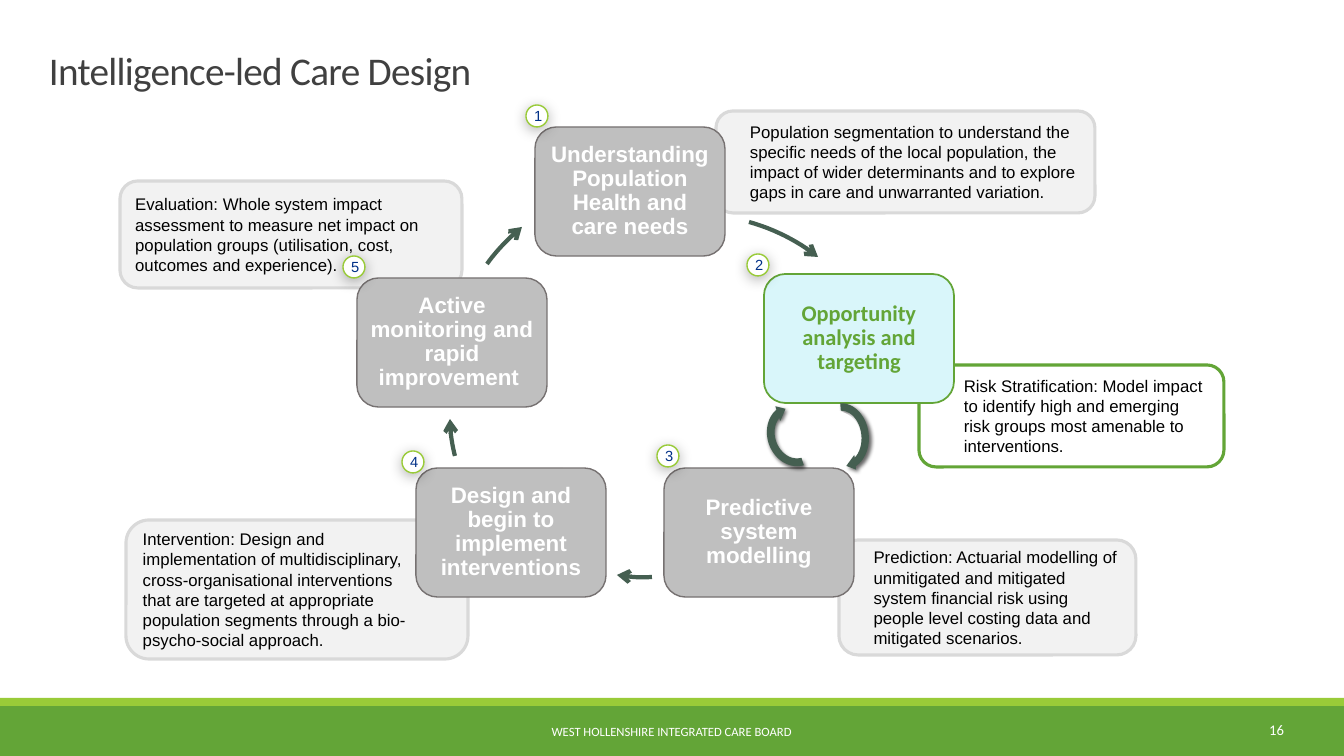
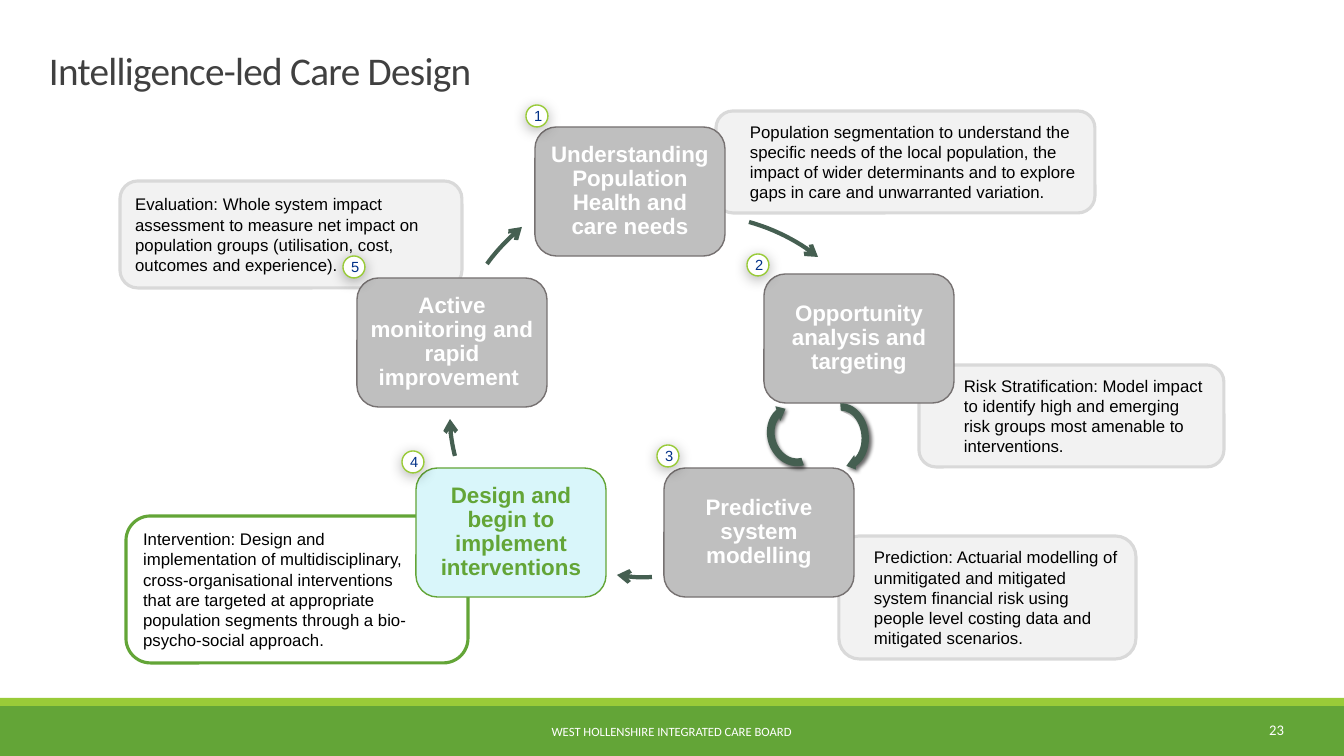
from lxml.etree import SubElement
from pptx import Presentation
from pptx.dml.color import RGBColor as Rgb
from pptx.enum.shapes import MSO_SHAPE as Kind
from pptx.enum.text import MSO_ANCHOR as Anchor, PP_ALIGN as Align
from pptx.oxml.ns import qn
from pptx.util import Pt

PX = 914400 / 100.8  # EMU in one px
COL = {
    "white": "FFFFFF", "black": "000000", "title": "404040", "green": "63A537",
    "lime": "99CB38", "pale": "F2F2F2", "rim": "D9D9D9", "grey": "BFBFBF",
    "edge": "767171", "aqua": "D9F6FA", "dark": "455F51", "navy": "003087",
}

# Step: left, top, text, badge left, badge top
STEPS = [
    (535, 127, "Understanding Population Health and care needs", 526, 105),
    (764, 274, "Opportunity analysis and targeting", 747, 254),
    (664, 468, "Predictive system modelling", 657, 445),
    (416, 468, "Design and begin to implement interventions", 402, 451),
    (357, 278, "Active monitoring and rapid improvement ", 343, 256),
]
# Note: step, box, left and right inset, whether its height varies, text
NOTES = [
    (3, (839, 540, 297, 115), 29, 10, True,
     "Prediction: Actuarial modelling of unmitigated and mitigated system "
     "financial risk using people level costing data and mitigated scenarios."),
    (1, (716, 111, 379, 102), 29, 10, False,
     "Population segmentation to understand the specific needs of the local "
     "population, the impact of wider determinants and to explore gaps in care "
     "and unwarranted variation."),
    (2, (919, 365, 305, 102), 40, 10, False,
     "Risk Stratification: Model impact to identify high and emerging risk "
     "groups most amenable to interventions."),
    (4, (126, 520, 342, 139), 10, 39, True,
     "Intervention: Design and implementation of multidisciplinary, "
     "cross-organisational interventions that are targeted at appropriate "
     "population segments through a bio-psycho-social approach."),
    (5, (120, 181, 342, 107), 10, 8, False,
     "Evaluation: Whole system impact assessment to measure net impact on "
     "population groups (utilisation, cost, outcomes and experience)."),
]
# Arrow: four Bezier points
ARROWS = [
    [(749, 222), (774, 229), (798, 241), (818, 257)],
    [(652, 577), (640, 578), (629, 577), (617, 575)],
    [(455, 456), (452, 444), (450, 431), (450, 419)],
    [(487, 264), (497, 250), (509, 238), (522, 227)],
]
LOOPS = [((806, 407, 74, 59), 83.6), ((759, 404, 71, 62), 251.2)]
# Page: number, active step, its font and line width, extra note height per side
PAGES = [("16", 2, "Calibri", 1.25, 0), ("23", 4, "Arial", 1, 4)]


def draw(kind, box, fill=None, line=None, width=1, shade=None):
    """Add a preset shape; shade is blur, distance, angle, opacity."""
    form = slide.shapes.add_shape(kind, *[round(v * PX) for v in box])
    form.shadow.inherit = False
    if fill:
        form.fill.solid()
        form.fill.fore_color.rgb = Rgb.from_string(COL[fill])
    else:
        form.fill.background()
    if line:
        form.line.color.rgb = Rgb.from_string(COL[line])
        form.line.width = Pt(width)
    else:
        form.line.fill.background()
    if shade:
        blur, dist, angle, alpha = shade
        glow = SubElement(form._element.spPr.find(qn("a:effectLst")), qn("a:outerShdw"),
                          blurRad=str(round(blur * PX)), dist=str(round(dist * PX)),
                          dir=str(angle * 60000), algn="ctr", rotWithShape="0")
        tone = SubElement(glow, qn("a:srgbClr"), val=COL["black"])
        SubElement(tone, qn("a:alpha"), val=str(alpha * 1000))
    return form


def write(form, text, size, col, font="Arial", align=Align.LEFT, pad=(10, 5, 10, 5)):
    """Set the text; pad is left, top, right, bottom."""
    frame = form.text_frame
    frame.word_wrap = True
    frame.vertical_anchor = Anchor.MIDDLE
    (frame.margin_left, frame.margin_top,
     frame.margin_right, frame.margin_bottom) = [round(v * PX) for v in pad]
    para = frame.paragraphs[0]
    para.text = text
    para.alignment = align
    para.font.size = Pt(size)
    para.font.name = font
    para.font.color.rgb = Rgb.from_string(COL[col])
    return para


deck = Presentation()
deck.slide_width = round(1344 * PX)
deck.slide_height = round(756 * PX)

for page, active, face, rule, grow in PAGES:
    slide = deck.slides.add_slide(deck.slide_layouts[6])

    # Bands, title and footer
    draw(Kind.RECTANGLE, (0, 706, 1344, 50), "green")
    draw(Kind.RECTANGLE, (0, 698, 1344, 8), "lime")
    for box, text, size, col, align, pad in [
        ((49, 0, 1245, 146), "Intelligence-led Care Design", 28, "title",
         Align.LEFT, (0, 0, 0, 0)),
        ((1151, 710, 143, 40), page, 10.5, "white", Align.RIGHT, (10, 5, 10, 5)),
        ((406, 712, 531, 40), "WEST HOLLENSHIRE INTEGRATED CARE BOARD", 9, "white",
         Align.CENTER, (10, 5, 10, 5)),
    ]:
        area = slide.shapes.add_textbox(*[round(v * PX) for v in box])
        para = write(area, text, size, col, "Calibri", align, pad)
        if col == "title":
            para.line_spacing = 0.85
            para.runs[0]._r.get_or_add_rPr().set("spc", "-50")

    # Notes behind the steps
    for step, (x, y, w, h), left, right, varies, text in NOTES:
        extra = grow if varies else 0
        fill, line = (None, "green") if step == active else ("pale", "rim")
        note = draw(Kind.ROUNDED_RECTANGLE, (x, y - extra, w, h + 2 * extra),
                    fill, line, 2.25)
        write(note, text, 12, "black", pad=(left, 5, right, 5))

    # Steps
    for step, (x, y, text, _, _) in enumerate(STEPS, 1):
        fill, line, col, font, width = (
            ("aqua", "green", "green", face, rule) if step == active
            else ("grey", "edge", "white", "Arial", 1))
        card = draw(Kind.ROUNDED_RECTANGLE, (x, y, 190, 129), fill, line, width)
        para = write(card, text, 16, col, font, Align.CENTER, (7, 7, 7, 7))
        para.font.bold = True
        para.line_spacing = 0.9

    # Curved arrows between the steps
    for a, b, c, d in ARROWS:
        curve = []
        for i in range(13):
            t = i / 12
            s = 1 - t
            curve.append([round(PX * (s**3 * p + 3 * s * s * t * q + 3 * s * t * t * r + t**3 * e))
                          for p, q, r, e in zip(a, b, c, d)])
        pen = slide.shapes.build_freeform(*curve[0])
        pen.add_line_segments(curve[1:], close=False)
        arc = pen.convert_to_shape()
        arc.shadow.inherit = False
        arc.fill.background()
        arc.line.color.rgb = Rgb.from_string(COL["dark"])
        arc.line.width = Pt(3)
        SubElement(arc._element.spPr.find(qn("a:ln")), qn("a:tailEnd"), type="arrow")

    # Number badges
    for step, (_, _, _, x, y) in enumerate(STEPS, 1):
        badge = draw(Kind.OVAL, (x, y, 22, 22), "white", "lime", 1, (14, 3, 90, 30))
        write(badge, str(step), 10.5, "navy", align=Align.CENTER, pad=(5, 5, 5, 5))

    # Loop between steps 2 and 3
    for box, turn in LOOPS:
        loop = draw(Kind.CIRCULAR_ARROW, box, "dark", shade=(4, 3, 45, 60))
        loop.adjustments[3] = 108.967
        loop.rotation = turn
    draw(Kind.OVAL, (802, 410, 58, 49), "white")

deck.save("out.pptx")
